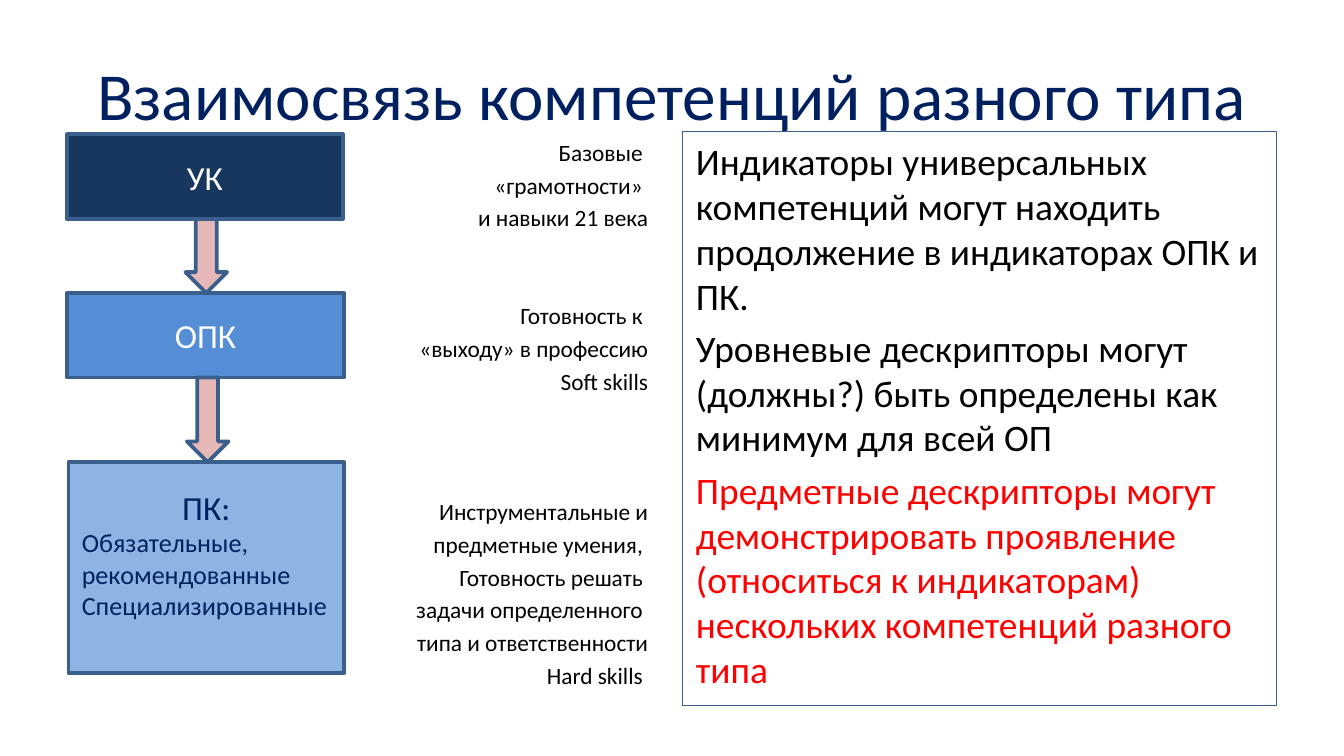
"""Build a slide on how competencies of different types are linked."""
from pptx import Presentation
from pptx.dml.color import RGBColor
from pptx.enum.shapes import MSO_SHAPE as SHAPE
from pptx.enum.text import MSO_ANCHOR as ANCHOR, PP_ALIGN as ALIGN
from pptx.util import Inches, Pt

NAVY = RGBColor(0x00, 0x20, 0x60)
DEEP = RGBColor(0x17, 0x37, 0x5E)
BLUE = RGBColor(0x55, 0x8E, 0xD5)
LIGHT = RGBColor(0x8E, 0xB4, 0xE3)
PINK = RGBColor(0xE6, 0xB9, 0xB8)
OUTLINE = RGBColor(0x3A, 0x5F, 0x8C)
WHITE = RGBColor(0xFF, 0xFF, 0xFF)
BLACK = RGBColor(0x00, 0x00, 0x00)
RED = RGBColor(0xFF, 0x00, 0x00)


def add_box(kind, box, fill, line_width=2):
    sp = s.shapes.add_shape(kind, *map(Inches, box))
    sp.shadow.inherit = False
    if fill is None:
        sp.fill.background()
    else:
        sp.fill.solid()
        sp.fill.fore_color.rgb = fill
    sp.line.color.rgb = OUTLINE
    sp.line.width = Pt(line_width)
    return sp


def write(tf, i, text, size, color, align, before=0):
    p = tf.paragraphs[0] if i == 0 else tf.add_paragraph()
    p.text = text
    p.alignment = align
    p.space_before = Pt(before)
    p.font.name = "Calibri"
    p.font.size = Pt(size)
    p.font.color.rgb = color


prs = Presentation()
prs.slide_width, prs.slide_height = Inches(10), Inches(10 * 9 / 16)
s = prs.slides.add_slide(prs.slide_layouts[5])

title = s.shapes.title
title.left, title.top, title.width, title.height = map(Inches, (0.5, 0.23, 9, 0.94))
title.text_frame.vertical_anchor = ANCHOR.MIDDLE
write(title.text_frame, 0, "Взаимосвязь компетенций разного типа", 36, NAVY, ALIGN.CENTER)

groups = [
    (2.5, ["Базовые ", "«грамотности» ", "и навыки 21 века"]),
    (37.5, ["Готовность к ", "«выходу» в профессию", "Soft skills"]),
    (55, ["Инструментальные и", "предметные умения, ", "Готовность решать ",
          "задачи определенного ", "типа и ответственности", "Hard skills "]),
]
notes = s.shapes.add_textbox(*map(Inches, (0.5, 0.98, 4.42, 4.19))).text_frame
notes.word_wrap = True
row = 0
for gap, lines in groups:
    for i, text in enumerate(lines):
        write(notes, row, text, 12.5, BLACK, ALIGN.RIGHT, gap if i == 0 else 2.5)
        row += 1

theses = [
    ("Индикаторы универсальных компетенций могут находить продолжение "
     "в индикаторах ОПК и ПК.", BLACK),
    ("Уровневые дескрипторы могут (должны?) быть определены как минимум "
     "для всей ОП", BLACK),
    ("Предметные дескрипторы могут демонстрировать проявление (относиться "
     "к индикаторам) нескольких компетенций разного типа", RED),
]
tf = add_box(SHAPE.RECTANGLE, (5.08, 0.98, 4.42, 4.27), None, 0.75).text_frame
tf.vertical_anchor = ANCHOR.TOP
for i, (text, color) in enumerate(theses):
    write(tf, i, text, 20, color, ALIGN.LEFT, 4)

levels = [
    ((0.5, 1, 2.05, 0.63), DEEP, WHITE, 0.05, "УК", []),
    ((0.5, 2.18, 2.06, 0.63), BLUE, WHITE, 0.05, "ОПК", []),
    ((0.51, 3.44, 2.05, 1.57), LIGHT, NAVY, 0.26, "ПК:",
     ["Обязательные, рекомендованные", "Специализированные"]),
]
for box, fill, color, bottom, heading, details in levels:
    tf = add_box(SHAPE.RECTANGLE, box, fill).text_frame
    tf.vertical_anchor = ANCHOR.MIDDLE
    tf.margin_bottom = Inches(bottom)
    write(tf, 0, heading, 18, color, ALIGN.CENTER)
    for i, text in enumerate(details, 1):
        write(tf, i, text, 14, color, ALIGN.LEFT)

for box in [(1.38, 1.63, 0.31, 0.55), (1.39, 2.81, 0.31, 0.63)]:
    add_box(SHAPE.DOWN_ARROW, box, PINK)

prs.save("out.pptx")
